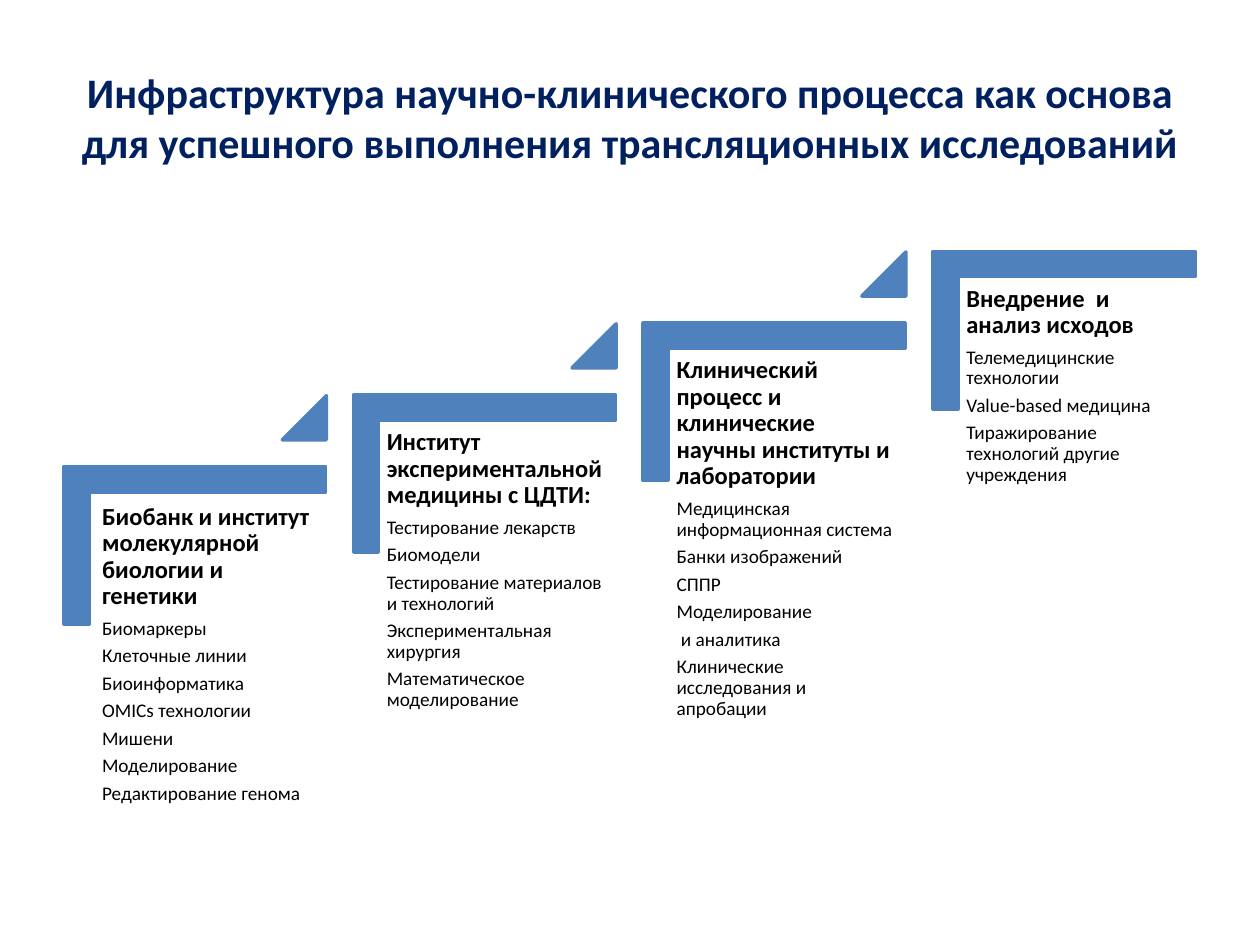
from pptx import Presentation
from pptx.dml.color import RGBColor
from pptx.enum.shapes import MSO_SHAPE
from pptx.enum.text import MSO_ANCHOR, PP_ALIGN
from pptx.util import Inches, Pt

NAVY = RGBColor(0x00, 0x20, 0x60)
BLUE = RGBColor(0x4F, 0x81, 0xBD)
BLACK = RGBColor(0, 0, 0)
FONT = "Calibri"

TITLE = ("Инфраструктура научно-клинического процесса как основа "
         "для успешного выполнения трансляционных исследований")
STEPS = [
    ("Биобанк и институт молекулярной биологии и генетики",
     ["Биомаркеры", "Клеточные линии", "Биоинформатика", "OMICs технологии",
      "Мишени", "Моделирование", "Редактирование генома"], (0.04, 0.02)),
    ("Институт экспериментальной медицины с ЦДТИ:",
     ["Тестирование лекарств", "Биомодели",
      "Тестирование материалов и технологий",
      "Экспериментальная хирургия", "Математическое моделирование"], (0, 0)),
    ("Клинический процесс и клинические научны институты и лаборатории",
     ["Медицинская информационная система", "Банки изображений", "СППР",
      "Моделирование", " и аналитика",
      "Клинические исследования и апробации"], (0, 0)),
    ("Внедрение  и анализ исходов",
     ["Телемедицинские технологии", "Value-based медицина",
      "Тиражирование технологий другие учреждения"], (0, 0)),
]

LEFT, TOP = 0.92, 3.29
RUN, RISE = 2.3, 0.57
SHORT, LONG = 1.25, 2.08
SIDE = 0.35


def add_run(para, text, size, color, bold):
    run = para.add_run()
    run.text = text
    font = run.font
    font.name, font.size, font.bold = FONT, Pt(size), bold
    font.color.rgb = color


def add_box(slide, left, top, width, height):
    box = slide.shapes.add_textbox(*map(Inches, (left, top, width, height)))
    box.text_frame.word_wrap = True
    return box.text_frame


def add_mark(slide, kind, left, top, width, height, adjust):
    mark = slide.shapes.add_shape(
        kind, *map(Inches, (left, top, width, height)))
    for i, value in enumerate(adjust):
        mark.adjustments[i] = value
    mark.shadow.inherit = False
    mark.fill.solid()
    mark.fill.fore_color.rgb = BLUE
    mark.line.color.rgb = BLUE
    mark.line.width = Pt(2)
    return mark


def add_text(slide, left, top, head, items):
    frame = add_box(slide, left, top, 1.88, 1.65)
    frame.margin_left = frame.margin_right = Inches(0.06)
    frame.margin_top = frame.margin_bottom = Inches(0.06)
    lines = [(head, 14, True)] + [(item, 11, False) for item in items]
    for i, (text, size, bold) in enumerate(lines):
        para = frame.add_paragraph() if i else frame.paragraphs[0]
        para.line_spacing = 0.9
        para.space_after = Pt(0.35 * size)
        add_run(para, text, size, BLACK, bold)


def main():
    deck = Presentation()
    deck.slide_width, deck.slide_height = Inches(10), Inches(7.5)
    slide = deck.slides.add_slide(deck.slide_layouts[6])

    frame = add_box(slide, 0.5, 0.3, 9, 1.25)
    frame.vertical_anchor = MSO_ANCHOR.MIDDLE
    para = frame.paragraphs[0]
    para.alignment = PP_ALIGN.CENTER
    add_run(para, TITLE, 24, NAVY, True)

    for i, (head, items, (dx, dy)) in enumerate(STEPS):
        left, top = LEFT + i * RUN, TOP - i * RISE
        step = add_mark(slide, MSO_SHAPE.CORNER, left, top, SHORT, LONG,
                        (0.16, 0.16))
        step.rotation = 90
        add_text(slide, left - 0.21 + dx, top + 0.63 + dy, head, items)
        if i < len(STEPS) - 1:
            add_mark(slide, MSO_SHAPE.ISOSCELES_TRIANGLE, left + 1.32,
                     top - 0.15, SIDE, SIDE, (1,))

    deck.save("out.pptx")


if __name__ == "__main__":
    main()
